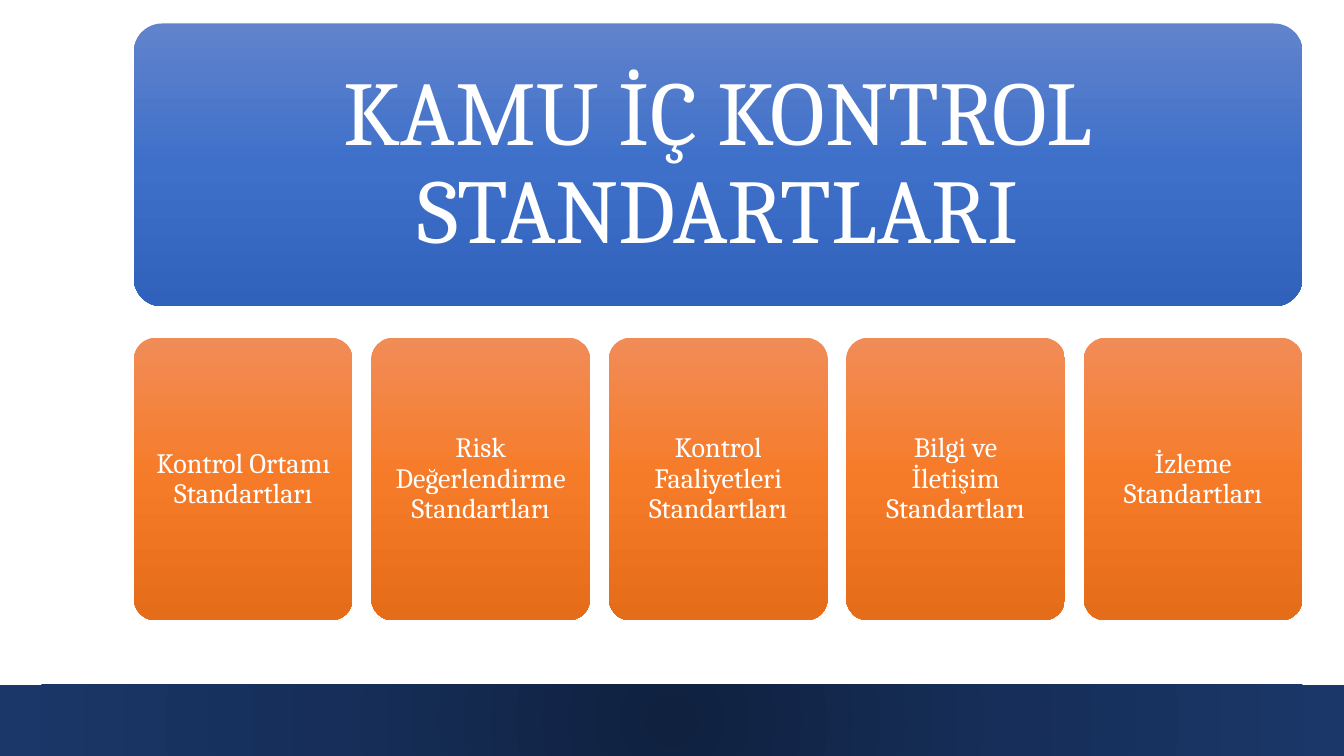
import pptx
import pptx.util
import pptx.oxml
import pptx.oxml.ns
import pptx.dml.color
import pptx.enum.shapes
import pptx.enum.text

Pt = pptx.util.Pt
Shape = pptx.enum.shapes.MSO_SHAPE

HUES = {
    "text": "FFFFFF",
    "band": ("10213F", "162E59", "1B3769"),
    "head": ("6183CB", "3E70CA", "3062BB"),
    "card": ("F18C57", "F67B28", "E56C19"),
}
DOWN = '<a:lin ang="5400000" scaled="0"/>'
ROUND = ('<a:path path="circle">'
         '<a:fillToRect l="50000" t="50000" r="50000" b="50000"/></a:path>')
TITLE = "KAMU İÇ KONTROL STANDARTLARI"
CARDS = [
    "Kontrol Ortamı Standartları",
    "Risk Değerlendirme Standartları",
    "Kontrol Faaliyetleri Standartları",
    "Bilgi ve İletişim Standartları",
    "İzleme Standartları",
]


def shade(shape, hues, flow):
    """Fill a shape with three evenly spaced gradient stops."""
    stops = "".join(
        f'<a:gs pos="{i * 50000}"><a:srgbClr val="{hue}"/></a:gs>'
        for i, hue in enumerate(hues))
    shape.fill.gradient()
    old = shape.element.spPr.find(pptx.oxml.ns.qn("a:gradFill"))
    new = pptx.oxml.parse_xml(
        f'<a:gradFill {pptx.oxml.ns.nsdecls("a")} rotWithShape="1">'
        f'<a:gsLst>{stops}</a:gsLst>{flow}</a:gradFill>')
    old.getparent().replace(old, new)


def panel(slide, kind, box, hues, flow=DOWN):
    shape = slide.shapes.add_shape(kind, *map(Pt, box))
    shape.shadow.inherit = False
    shade(shape, hues, flow)
    shape.line.fill.background()
    if kind == Shape.ROUNDED_RECTANGLE:
        shape.adjustments[0] = 0.1
    return shape


def write(shape, text, size, inset):
    frame = shape.text_frame
    frame.text = text
    look = {
        "word_wrap": True,
        "auto_size": pptx.enum.text.MSO_AUTO_SIZE.NONE,
        "vertical_anchor": pptx.enum.text.MSO_ANCHOR.MIDDLE,
    }
    for side in ("left", "top", "right", "bottom"):
        look["margin_" + side] = Pt(inset)
    for name, value in look.items():
        setattr(frame, name, value)
    para = frame.paragraphs[0]
    style = {
        "alignment": pptx.enum.text.PP_ALIGN.CENTER,
        "line_spacing": 0.9,
        "space_before": Pt(0),
    }
    for name, value in style.items():
        setattr(para, name, value)
    font = para.runs[0].font
    for name, value in {"name": "Cambria", "size": Pt(size)}.items():
        setattr(font, name, value)
    font.color.rgb = pptx.dml.color.RGBColor.from_string(HUES["text"])


def head(slide, box):
    """Blue panel with the slide title on it."""
    back = panel(slide, Shape.ROUNDED_RECTANGLE, box, HUES["head"])
    title = slide.shapes.title
    x, y, w, h = box
    pad = 6
    place = {"left": x + pad, "top": y + pad,
             "width": w - 2 * pad, "height": h - 2 * pad}
    for name, value in place.items():
        setattr(title, name, Pt(value))
    write(title, TITLE, 65, 19.5)
    back.element.addnext(title.element)


def cards(slide, box, gap):
    """Row of equal orange cards."""
    x, y, w, h = box
    wide = (w - gap * (len(CARDS) - 1)) / len(CARDS)
    for i, text in enumerate(CARDS):
        spot = (x + i * (wide + gap), y, wide, h)
        card = panel(slide, Shape.ROUNDED_RECTANGLE, spot, HUES["card"])
        write(card, text, 20, 10.2)


def main():
    deck = pptx.Presentation()
    deck.slide_width, deck.slide_height = Pt(960), Pt(540)
    slide = deck.slides.add_slide(deck.slide_layouts[5])
    # Bottom band
    panel(slide, Shape.RECTANGLE, (-0.5, 489, 961, 52.5), HUES["band"], ROUND)
    # Title and cards
    head(slide, (95.6, 16.8, 834.8, 202))
    cards(slide, (95.6, 241.2, 834.8, 202), 13.3)
    deck.save("out.pptx")


if __name__ == "__main__":
    main()
